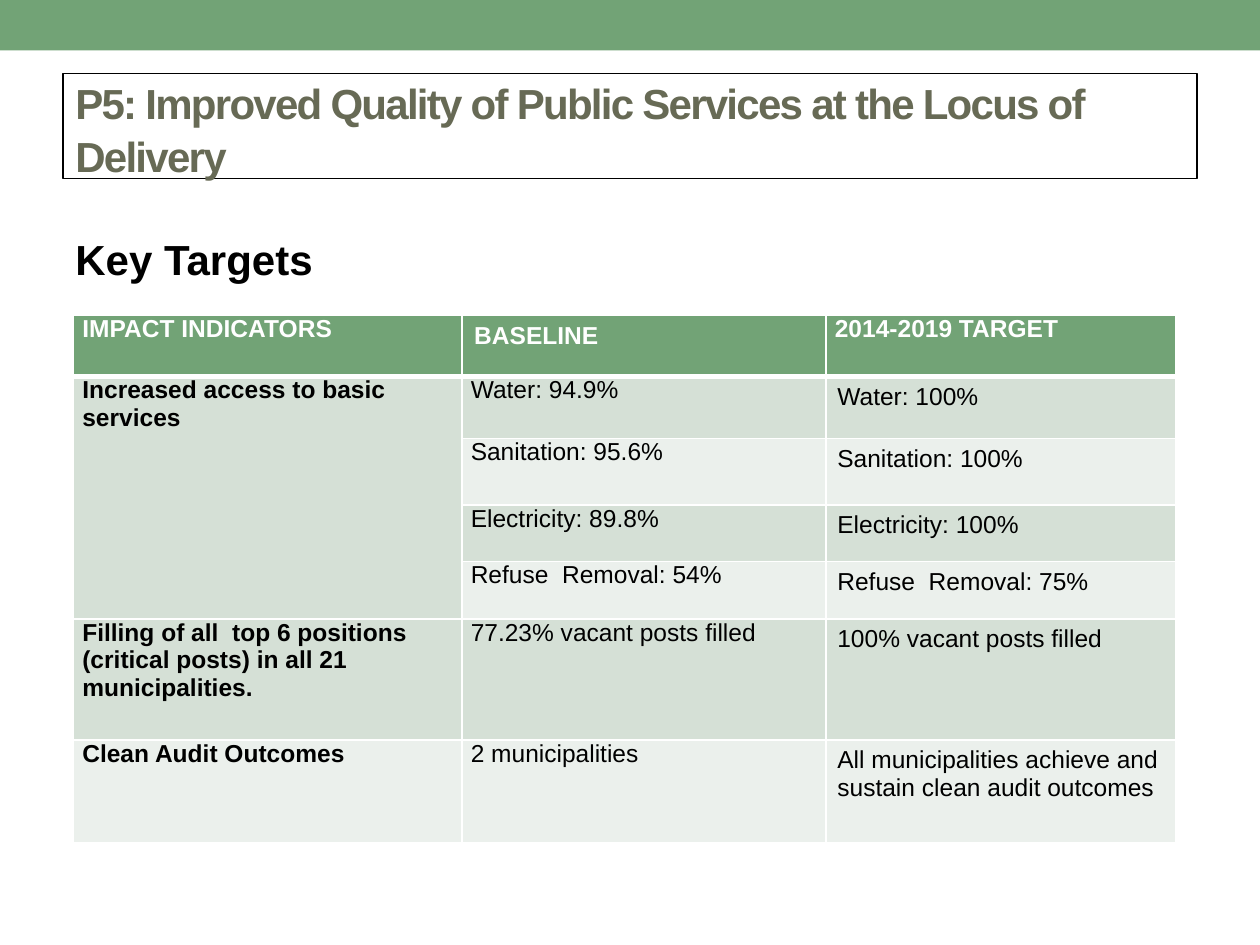
import pptx
import pptx.dml.color
import pptx.enum.shapes
import pptx.enum.text
import pptx.oxml
import pptx.oxml.ns
import pptx.util
from pptx.util import Cm, Pt

GREEN, PALE, PALEST = "72A376", "D5E0D6", "EBF0EC"
WHITE, BLACK, OLIVE = "FFFFFF", "000000", "676A55"
NARROW, MEDIUM, DEFAULT = (0.18, 0), (0.23, 0.13), (0.25, 0.13)


def colour(value):
    """Turn a hex string into a colour."""
    return pptx.dml.color.RGBColor.from_string(value)


class TargetSlide:
    """Hold the style and the current slide."""

    font = "Arial"

    def __init__(self, presentation):
        """Add a blank slide."""
        self.slide = presentation.slides.add_slide(presentation.slide_layouts[6])

    def add_text(self, paragraph, text, size, ink, bold=True, spacing=None):
        """Add one styled run."""
        run = paragraph.add_run()
        run.text = text
        run.font.name = self.font
        run.font.size = Pt(size)
        run.font.bold = bold
        run.font.color.rgb = colour(ink)
        if spacing is not None:
            run.font._element.set("spc", str(spacing * 100))

    def band(self, left, top, width, height, fill):
        """Draw a plain filled rectangle."""
        band = self.slide.shapes.add_shape(
            pptx.enum.shapes.MSO_SHAPE.RECTANGLE, Cm(left), Cm(top), Cm(width), Cm(height))
        band.shadow.inherit = False
        band.fill.solid()
        band.fill.fore_color.rgb = colour(fill)
        band.line.fill.background()

    def heading(self, left, top, width, height, text, ink, inset, line_spacing=None,
                spacing=None, outline=None, middle=False):
        """Place a bold heading, optionally outlined."""
        box = self.slide.shapes.add_textbox(Cm(left), Cm(top), Cm(width), Cm(height))
        frame = box.text_frame
        frame.word_wrap = True
        frame.margin_top, frame.margin_bottom = Cm(inset), Cm(0)
        if middle:
            frame.vertical_anchor = pptx.enum.text.MSO_ANCHOR.MIDDLE
        if outline:
            box.line.color.rgb = colour(outline)
            box.line.width = Pt(0.75)
        paragraph = frame.paragraphs[0]
        paragraph.line_spacing = line_spacing
        self.add_text(paragraph, text, 24, ink, spacing=spacing)

    def border(self, cell, bottom):
        """Give a cell white borders."""
        properties = cell._tc.get_or_add_tcPr()
        for index, (side, width) in enumerate(
                (("lnL", 1), ("lnR", 1), ("lnT", 1), ("lnB", bottom))):
            properties.insert(index, pptx.oxml.parse_xml(
                f'<a:{side} {pptx.oxml.ns.nsdecls("a")} w="{Pt(width)}"><a:solidFill>'
                f'<a:srgbClr val="{WHITE}"/></a:solidFill></a:{side}>'))

    def cell(self, cell, text, fill, ink, bold, insets, bottom):
        """Fill one table cell."""
        cell.fill.solid()
        cell.fill.fore_color.rgb = colour(fill)
        self.border(cell, bottom)
        side, edge = insets
        cell.margin_left = cell.margin_right = Cm(side)
        cell.margin_top = cell.margin_bottom = Cm(edge)
        if text:
            paragraph = cell.text_frame.paragraphs[0]
            paragraph.space_after = Pt(6)
            self.add_text(paragraph, text, 14, ink, bold)

    def table(self, left, top, widths, heights, rows, merged):
        """Build the table with a header and alternating rows."""
        table = self.slide.shapes.add_table(
            len(rows), len(widths), Cm(left), Cm(top),
            Cm(sum(widths)), Cm(sum(heights))).table
        for column, width in zip(table.columns, widths):
            column.width = Cm(width)
        for row, height in zip(table.rows, heights):
            row.height = Cm(height)
        for r, texts in enumerate(rows):
            header = r == 0
            fill = GREEN if header else PALE if r % 2 else PALEST
            insets = (NARROW, DEFAULT, NARROW) if header else (NARROW, NARROW, MEDIUM)
            for c, text in enumerate(texts):
                self.cell(table.cell(r, c), text, fill, WHITE if header else BLACK,
                          header or c == 0, insets[c], 3 if header else 1)
        first, last = merged
        table.cell(first, 0).merge(table.cell(last, 0))


def main():
    """Build the key targets slide."""
    presentation = pptx.Presentation()
    presentation.slide_width, presentation.slide_height = Cm(25.4), Cm(19.05)
    targets = TargetSlide(presentation)
    targets.band(0, 0, 25.4, 1.02, GREEN)
    targets.heading(1.27, 4.45, 22.86, 13.54, "Key Targets", BLACK, 0.25)
    targets.table(
        1.48, 6.36, [7.83, 7.34, 7.05], [1.23, 1.25, 1.34, 1.14, 1.16, 2.44, 2.06],
        [("IMPACT INDICATORS", "BASELINE", "2014-2019 TARGET"),
         ("Increased access to basic services", "Water: 94.9%", "Water: 100%"),
         ("", "Sanitation: 95.6%", "Sanitation: 100%"),
         ("", "Electricity: 89.8%", "Electricity: 100%"),
         ("", "Refuse  Removal: 54%", "Refuse  Removal: 75%"),
         ("Filling of all  top 6 positions (critical posts) in all 21 municipalities.",
          "77.23% vacant posts filled", "100% vacant posts filled"),
         ("Clean Audit Outcomes", "2 municipalities",
          "All municipalities achieve and sustain clean audit outcomes")],
        merged=(1, 4))
    targets.heading(
        1.27, 1.48, 22.86, 2.12,
        "P5: Improved Quality of Public Services at the Locus of Delivery", OLIVE, 0.08,
        line_spacing=1.06, spacing=-1, outline=BLACK, middle=True)
    presentation.save("out.pptx")


if __name__ == "__main__":
    main()
